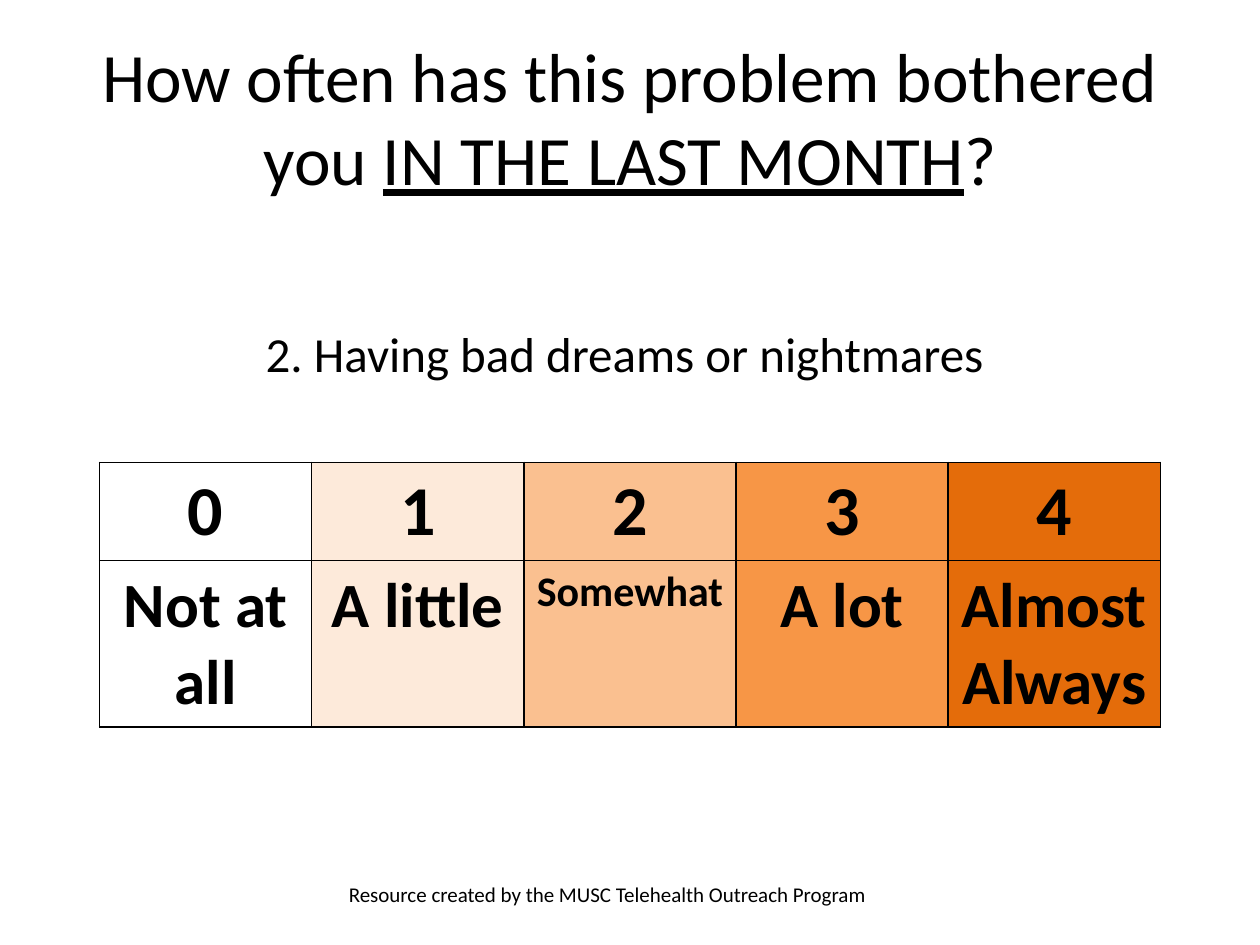
from dataclasses import dataclass

from lxml import etree
from pptx import Presentation
from pptx import util as u
from pptx.dml.color import RGBColor
from pptx.enum import text
from pptx.oxml.ns import qn

COLUMNS, ROWS = 100, 75


@dataclass(frozen=True)
class Theme:
    font: str = "Calibri"
    ink: str = "000000"
    scale: tuple = ("FFFFFF", "FDEADA", "FAC090", "F79646", "E46C0A")
    title: float = 39.6
    item: int = 28
    number: int = 40
    label: int = 36
    small_label: int = 24
    credit: int = 12
    border: int = 1


class SlideBuilder:
    def __init__(self, prs, theme):
        self.theme = theme
        self.cell_w = prs.slide_width / COLUMNS
        self.cell_h = prs.slide_height / ROWS
        self.s = prs.slides.add_slide(prs.slide_layouts[5])

    def box(self, x, y, w, h):
        """Turn grid columns and rows into lengths."""
        return (u.Emu(round(x * self.cell_w)), u.Emu(round(y * self.cell_h)),
                u.Emu(round(w * self.cell_w)), u.Emu(round(h * self.cell_h)))

    def set_text(self, tf, runs, size, align=text.PP_ALIGN.CENTER, bold=False):
        """Fill the first paragraph with (words, underline) runs."""
        p = tf.paragraphs[0]
        p.alignment = align
        for words, underline in runs:
            r = p.add_run()
            r.text = words
            style = {"name": self.theme.font, "size": u.Pt(size),
                     "bold": bold, "underline": underline}
            for name, value in style.items():
                setattr(r.font, name, value)
            r.font.color.rgb = RGBColor.from_string(self.theme.ink)

    def title(self, at, runs):
        sp = self.s.shapes.title
        sp.left, sp.top, sp.width, sp.height = self.box(*at)
        sp.text_frame.vertical_anchor = text.MSO_ANCHOR.MIDDLE
        self.set_text(sp.text_frame, runs, self.theme.title)

    def text_box(self, at, words, size):
        tf = self.s.shapes.add_textbox(*self.box(*at)).text_frame
        tf.word_wrap = True
        self.set_text(tf, [(words, False)], size, text.PP_ALIGN.LEFT)

    def table(self, at, columns, row_heights):
        x, y, w = at
        frame = self.s.shapes.add_table(
            len(row_heights), columns, *self.box(x, y, w, sum(row_heights)))
        table = frame.table
        table.first_row = table.horz_banding = False
        for row, height in zip(table.rows, row_heights):
            row.height = self.box(0, 0, 0, height)[3]
        return table

    def outline(self, cell):
        tc_pr = cell._tc.get_or_add_tcPr()
        for side in ("lnL", "lnR", "lnT", "lnB"):
            ln = etree.SubElement(tc_pr, qn(f"a:{side}"),
                                  w=str(u.Pt(self.theme.border)))
            fill = etree.SubElement(ln, qn("a:solidFill"))
            etree.SubElement(fill, qn("a:srgbClr"), val=self.theme.ink)

    def item(self, at, height, words):
        cell = self.table(at, 1, [height]).cell(0, 0)
        margins = {"margin_left": 0.05, "margin_right": 0.05,
                   "margin_top": 0, "margin_bottom": 0}
        for name, value in margins.items():
            setattr(cell, name, u.Inches(value))
        cell.fill.background()
        self.set_text(cell.text_frame, [(words, False)], self.theme.item)

    def rating_scale(self, at, row_heights, answers):
        """Draw numbers from zero above (label, size) answers."""
        table = self.table(at, len(answers), row_heights)
        for i, (answer, color) in enumerate(zip(answers, self.theme.scale)):
            entries = ((str(i), self.theme.number), answer)
            for row, (words, size) in enumerate(entries):
                cell = table.cell(row, i)
                self.outline(cell)
                cell.fill.solid()
                cell.fill.fore_color.rgb = RGBColor.from_string(color)
                self.set_text(cell.text_frame, [(words, False)], size, bold=True)


def main():
    prs = Presentation()
    prs.slide_width, prs.slide_height = u.Inches(10), u.Inches(7.5)
    theme = Theme()
    slide = SlideBuilder(prs, theme)

    slide.title((5, 3, 90, 12.5), [
        ("How often has this problem bothered you ", False),
        ("IN THE LAST MONTH", True),
        ("?", False),
    ])
    slide.text_box((26.7, 69.5, 45, 4),
                   "Resource created by the MUSC Telehealth Outreach Program",
                   theme.credit)
    slide.rating_scale((7.9, 36.7, 84.2), (7.8, 13.2), [
        ("Not at all", theme.label),
        ("A little", theme.label),
        ("Somewhat", theme.small_label),
        ("A lot", theme.label),
        ("Almost Always", theme.label),
    ])
    slide.item((7.9, 25.9, 84.2), 4.7, "2. Having bad dreams or nightmares ")
    prs.save("out.pptx")


if __name__ == "__main__":
    main()
